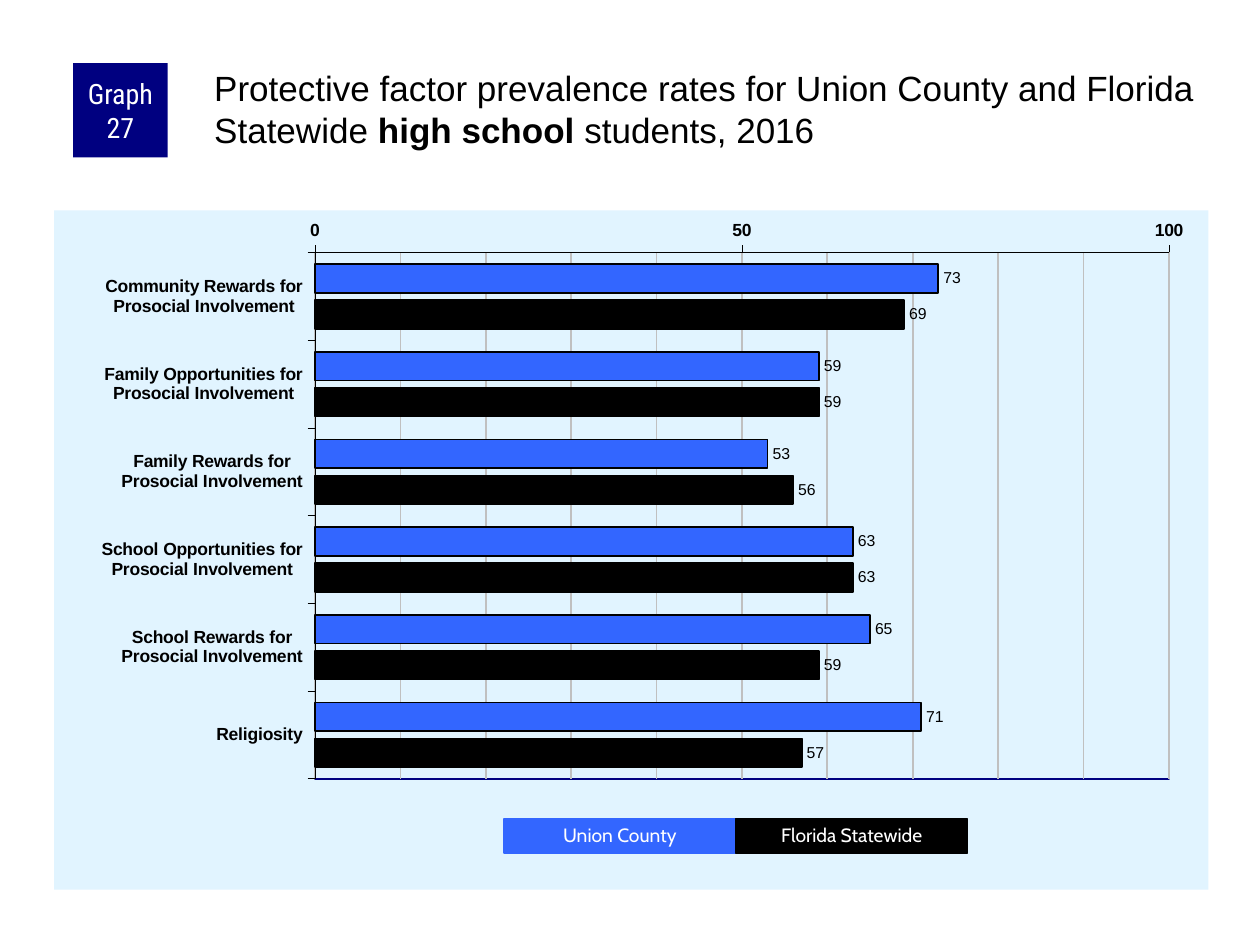
from lxml import etree
from pptx import Presentation
from pptx.chart.data import CategoryChartData
from pptx.dml.color import RGBColor
from pptx.enum.chart import XL_AXIS_CROSSES, XL_CHART_TYPE, XL_LABEL_POSITION, XL_TICK_LABEL_POSITION, XL_TICK_MARK
from pptx.enum.shapes import MSO_SHAPE
from pptx.enum.text import MSO_ANCHOR, PP_ALIGN
from pptx.oxml import parse_xml
from pptx.oxml.ns import nsdecls
from pptx.util import Inches, Pt

BAR_CLUSTERED = XL_CHART_TYPE.BAR_CLUSTERED
OUTSIDE_END = XL_LABEL_POSITION.OUTSIDE_END
TICK_OUT, TICK_NONE = XL_TICK_MARK.OUTSIDE, XL_TICK_MARK.NONE
NEXT_TO_AXIS = XL_TICK_LABEL_POSITION.NEXT_TO_AXIS
CROSS_MAXIMUM = XL_AXIS_CROSSES.MAXIMUM
RECTANGLE = MSO_SHAPE.RECTANGLE
CENTER, LEFT = PP_ALIGN.CENTER, PP_ALIGN.LEFT
MIDDLE, TOP = MSO_ANCHOR.MIDDLE, MSO_ANCHOR.TOP

NAVY, BLUE, BLACK, WHITE = "000080", "3366FF", "000000", "FFFFFF"
PALE, GRAY = "E1F4FF", "C0C0C0"

TITLE = [
    ("Protective factor prevalence rates for Union County and Florida Statewide ", False),
    ("high school ", True),
    ("students, 2016", False),
]
BADGE = "Graph 27"
CATEGORIES = [
    "Community Rewards for\nProsocial Involvement",
    "Family Opportunities for\nProsocial Involvement",
    "Family Rewards for\nProsocial Involvement",
    "School Opportunities for\nProsocial Involvement",
    "School Rewards for\nProsocial Involvement",
    "Religiosity",
]
SERIES = [
    ("Union County", BLUE, (73, 59, 53, 63, 65, 71)),
    ("Florida Statewide", BLACK, (69, 59, 56, 63, 59, 57)),
]
PLOT = {"x": 0.226, "y": 0.062, "w": 0.74, "h": 0.775}
LEGEND_LEFT, LEGEND_TOP, KEY_WIDTH, KEY_HEIGHT = 4, 6.5, 1.84, 0.27


def color(value):
    return RGBColor.from_string(value)


def set_font(font, name, size, value, bold=False):
    font.name, font.size, font.bold = name, Pt(size), bold
    font.color.rgb = color(value)


def set_line(line, value, width):
    line.color.rgb = color(value)
    line.width = Pt(width)


def set_fill(fill, value):
    fill.solid()
    fill.fore_color.rgb = color(value)


def add_box(slide, place, text, fill, font, size, border=False, spacing=None):
    box = slide.shapes.add_shape(RECTANGLE, *map(Inches, place))
    box.shadow.inherit = False
    set_fill(box.fill, fill)
    if border:
        set_line(box.line, fill, 0.75)
    else:
        box.line.fill.background()
    frame = box.text_frame
    frame.word_wrap = True
    frame.vertical_anchor = MIDDLE
    frame.margin_left = frame.margin_right = Inches(0.05)
    frame.margin_top = frame.margin_bottom = 0
    frame.text = text
    para = frame.paragraphs[0]
    para.alignment = CENTER
    para.line_spacing = spacing
    set_font(para.runs[0].font, font, size, WHITE)


def add_title(slide):
    title = slide.shapes.title
    title.left, title.top, title.width, title.height = map(Inches, (1.67, 0.5, 7.92, 0.83))
    frame = title.text_frame
    frame.word_wrap = True
    frame.vertical_anchor = TOP
    frame.margin_left = frame.margin_top = Inches(0.03)
    frame.margin_right = frame.margin_bottom = 0
    para = frame.paragraphs[0]
    para.alignment = LEFT
    for text, bold in TITLE:
        span = para.add_run()
        span.text = text
        set_font(span.font, "Arial", 20, BLACK, bold)


def chart_format(fill, line):
    def paint(value):
        return f'<a:solidFill><a:srgbClr val="{value}"/></a:solidFill>' if value else "<a:noFill/>"

    return parse_xml(
        f'<c:spPr {nsdecls("c", "a")}>{paint(fill)}'
        f'<a:ln w="{Pt(1)}">{paint(line)}</a:ln></c:spPr>')


def style_areas(chart):
    space = chart.element
    area = space.chart.plotArea
    for old in area.findall("{*}layout"):
        area.remove(old)
    layout = parse_xml(f'<c:layout {nsdecls("c")}><c:manualLayout/></c:layout>')
    settings = [("layoutTarget", "inner"), ("xMode", "edge"), ("yMode", "edge"), *PLOT.items()]
    namespace = etree.QName(layout).namespace
    for name, value in settings:
        etree.SubElement(layout[0], f"{{{namespace}}}{name}").set("val", str(value))
    area.insert(0, layout)
    area.append(chart_format(None, NAVY))
    space.chart.addnext(chart_format(PALE, None))


def add_chart(slide):
    data = CategoryChartData()
    data.categories = CATEGORIES
    for name, _, values in SERIES:
        data.add_series(name, values)
    place = map(Inches, (0.43, 1.67, 9.16, 5.39))
    chart = slide.shapes.add_chart(BAR_CLUSTERED, *place, data).chart
    chart.has_legend = chart.has_title = False
    set_font(chart.font, "Arial", 11.8, BLACK)
    style_areas(chart)

    plot = chart.plots[0]
    plot.gap_width, plot.overlap = 80, -25
    plot.vary_by_categories = False
    for series, (_, fill, _) in zip(plot.series, SERIES):
        set_fill(series.format.fill, fill)
        set_line(series.format.line, BLACK, 1)
        series.invert_if_negative = False
        labels = series.data_labels
        labels.show_value = True
        labels.position = OUTSIDE_END
        set_font(labels.font, "Arial", 9, BLACK)

    categories, values = chart.category_axis, chart.value_axis
    for axis in (categories, values):
        axis.major_tick_mark, axis.minor_tick_mark = TICK_OUT, TICK_NONE
        axis.tick_label_position = NEXT_TO_AXIS
        set_font(axis.tick_labels.font, "Arial", 10, BLACK, True)
        set_line(axis.format.line, BLACK, 0.25)
    categories.reverse_order = True
    categories.crosses = CROSS_MAXIMUM
    values.minimum_scale, values.maximum_scale = 0, 100
    values.major_unit, values.minor_unit = 50, 10
    values.has_major_gridlines = values.has_minor_gridlines = True
    set_line(values.major_gridlines.format.line, GRAY, 1)
    chart.element.find(".//{*}minorGridlines").append(chart_format(None, GRAY))


def main():
    deck = Presentation()
    deck.slide_width, deck.slide_height = Inches(10), Inches(7.5)
    slide = deck.slides.add_slide(deck.slide_layouts[5])
    add_chart(slide)
    add_box(slide, (0.58, 0.5, 0.75, 0.75), BADGE, NAVY, "Roboto Condensed", 16)
    add_title(slide)
    for index, (name, fill, _) in enumerate(SERIES):
        place = (LEGEND_LEFT + index * KEY_WIDTH, LEGEND_TOP, KEY_WIDTH, KEY_HEIGHT)
        add_box(slide, place, name, fill, "Cabin", 11, border=True, spacing=0.9)
    deck.save("out.pptx")


if __name__ == "__main__":
    main()
